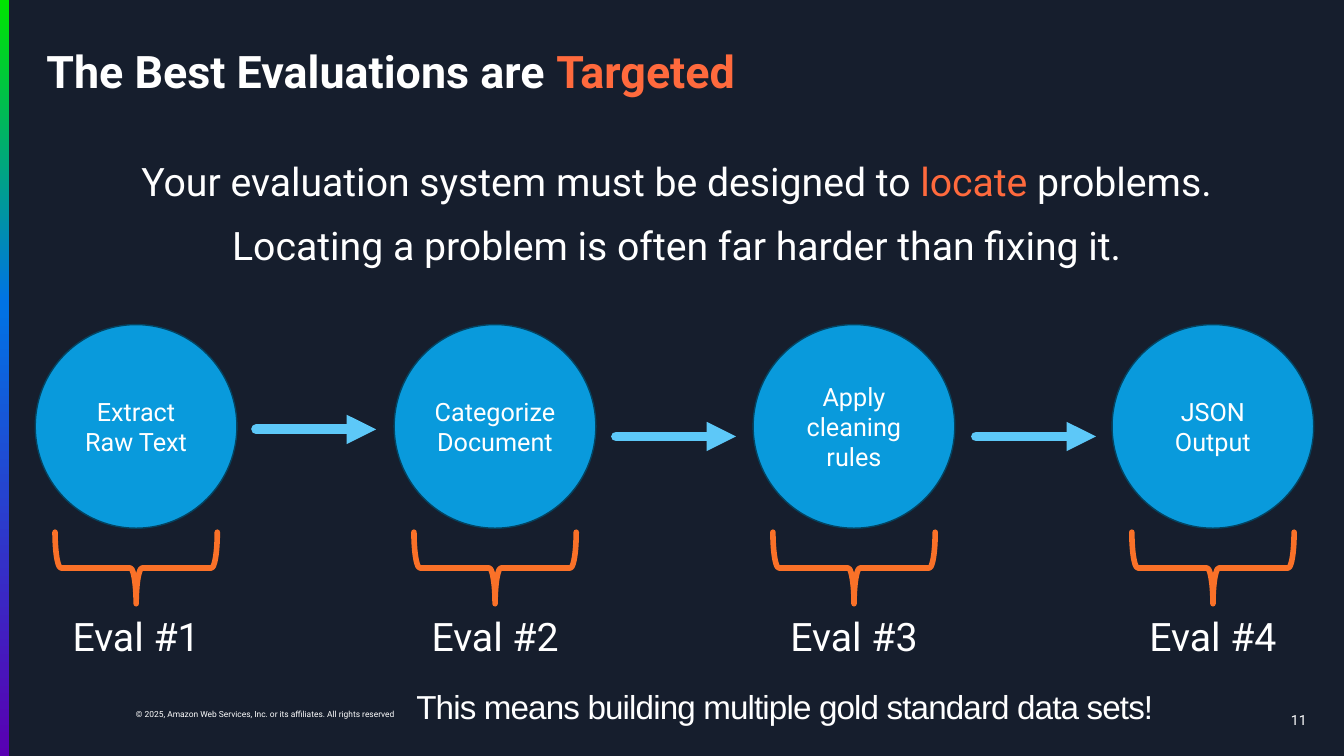
"""Build the slide on targeted evaluations: four pipeline stages, each with its own check."""
import copy

import lxml.etree
import pptx
import pptx.dml.color
import pptx.enum.shapes
import pptx.enum.text
import pptx.oxml.ns
import pptx.util

RGBColor = pptx.dml.color.RGBColor
Inches = pptx.util.Inches
Align = pptx.enum.text.PP_ALIGN
Anchor = pptx.enum.text.MSO_ANCHOR
Shape = pptx.enum.shapes.MSO_SHAPE
qn = pptx.oxml.ns.qn

NIGHT = RGBColor(0x16, 0x1E, 0x2D)
WHITE = RGBColor(0xFF, 0xFF, 0xFF)
CORAL = RGBColor(0xFF, 0x6A, 0x3D)
BLUE = RGBColor(0x09, 0x9A, 0xDC)
DEEP_BLUE = RGBColor(0x04, 0x43, 0x60)
SKY = RGBColor(0x5D, 0xC8, 0xF8)
ORANGE = RGBColor(0xFA, 0x71, 0x28)
STRIPE = [(0, RGBColor(0x00, 0xE5, 0x00)), (0.4, RGBColor(0x00, 0x73, 0xE5)),
          (1, RGBColor(0x59, 0x00, 0xB2))]

WIDTH, HEIGHT = 13.33, 7.5
PITCH = 3.56
FIRST_CENTRE = 1.35
STAGES = ["Extract Raw Text", "Categorize Document", "Apply cleaning rules", "JSON Output"]


def place(shape, left, top, width, height):
    """Set a shape's frame in inches."""
    frame = {"left": left, "top": top, "width": width, "height": height}
    for name, value in frame.items():
        setattr(shape, name, Inches(value))


def write(shape, lines, size, align, margins=(0, 0.05, 0, 0.05), anchor=Anchor.TOP,
          wrap=True, after=0, spacing=1.0, bold=False, font="Roboto"):
    """Fill a shape with lines, each a list of (text, colour) spans."""
    box = shape.text_frame
    settings = {"word_wrap": wrap, "auto_size": pptx.enum.text.MSO_AUTO_SIZE.NONE,
                "vertical_anchor": anchor}
    sides = ("margin_left", "margin_top", "margin_right", "margin_bottom")
    settings.update(zip(sides, map(Inches, margins)))
    for name, value in settings.items():
        setattr(box, name, value)
    for index, line in enumerate(lines):
        para = box.add_paragraph() if index else box.paragraphs[0]
        layout = {"alignment": align, "space_before": pptx.util.Pt(0),
                  "space_after": pptx.util.Pt(after), "line_spacing": spacing}
        for name, value in layout.items():
            setattr(para, name, value)
        for text, colour in line:
            span = para.add_run()
            span.text = text
            span.font.color.rgb = colour
            for name, value in {"name": font, "size": pptx.util.Pt(size), "bold": bold}.items():
                setattr(span.font, name, value)


deck = pptx.Presentation()
deck.slide_width, deck.slide_height = Inches(WIDTH), Inches(HEIGHT)
page = deck.slides.add_slide(deck.slide_layouts[1])
page.background.fill.solid()
page.background.fill.fore_color.rgb = NIGHT
shapes = page.shapes

stripe = shapes.add_shape(Shape.RECTANGLE, 0, 0, Inches(0.09), Inches(HEIGHT))
stripe.shadow.inherit = False
stripe.line.fill.background()
stripe.fill.gradient()
stripe.fill.gradient_angle = 270
stops = stripe.element.spPr.find(".//" + qn("a:gsLst"))
stops.append(copy.deepcopy(stops[-1]))
for stop, (position, colour) in zip(stripe.fill.gradient_stops, STRIPE):
    stop.position = position
    stop.color.rgb = colour

place(shapes.title, 0.46, 0.39, 12.5, 0.7)
write(shapes.title, [[("The Best Evaluations are ", WHITE), ("Targeted", CORAL)]], 32,
      Align.LEFT, margins=(0, 0.1, 0, 0.05), spacing=0.9, bold=True)

body = page.placeholders[1]
place(body, 0.46, 1.51, 12.5, 1.4)
write(body, [[("Your evaluation system must be designed to ", WHITE), ("locate", CORAL),
              (" problems.", WHITE)],
             [("Locating a problem is often far harder than fixing it.", WHITE)]],
      28, Align.CENTER, after=12)
for para in body.text_frame.paragraphs:
    properties = para._p.get_or_add_pPr()
    properties.set("marL", "0")
    properties.set("indent", "0")
    lxml.etree.SubElement(properties, qn("a:buNone"))

for index, stage in enumerate(STAGES):
    centre = FIRST_CENTRE + index * PITCH

    circle = shapes.add_shape(Shape.OVAL, Inches(centre - 1), Inches(3.22), Inches(2), Inches(2.02))
    circle.shadow.inherit = False
    circle.fill.solid()
    circle.fill.fore_color.rgb = BLUE
    circle.line.color.rgb = DEEP_BLUE
    circle.line.width = pptx.util.Pt(1)
    write(circle, [[(stage, WHITE)]], 18, Align.CENTER, margins=(0.1, 0.05, 0.1, 0.05),
          anchor=Anchor.MIDDLE)

    brace = shapes.add_shape(Shape.RIGHT_BRACE, Inches(centre - 0.355), Inches(4.83),
                             Inches(0.71), Inches(1.61))
    brace.shadow.inherit = False
    brace.rotation = 90
    brace.fill.background()
    brace.line.color.rgb = ORANGE
    brace.line.width = pptx.util.Pt(4)
    brace.element.spPr.find(qn("a:ln")).set("cap", "rnd")

    label = shapes.add_textbox(Inches(centre - 0.92), Inches(6.03), Inches(1.84), Inches(0.57))
    write(label, [[(f"Eval #{index + 1}", WHITE)]], 28, Align.CENTER, after=12)

for index, level in enumerate([4.26, 4.33, 4.33]):
    start = 2.54 + index * 3.57
    arrow = shapes.add_connector(pptx.enum.shapes.MSO_CONNECTOR.STRAIGHT, Inches(start),
                                 Inches(level), Inches(start + 1.19), Inches(level))
    arrow.line.color.rgb = SKY
    arrow.line.width = pptx.util.Pt(7)
    stroke = arrow.element.spPr.find(qn("a:ln"))
    stroke.set("cap", "rnd")
    lxml.etree.SubElement(stroke, qn("a:tailEnd"), type="triangle")
    lxml.etree.SubElement(arrow.element.spPr, qn("a:effectLst"))

takeaway = shapes.add_textbox(Inches(4.13), Inches(6.8), Inches(8.43), Inches(0.7))
write(takeaway, [[("This means building multiple gold standard data sets!", WHITE)]], 23.7,
      Align.LEFT, spacing=0.9, font="Arial")
takeaway.text_frame.paragraphs[0].runs[0].font._element.set("spc", "-60")

rights = shapes.add_textbox(Inches(1.25), Inches(6.99), Inches(2.85), Inches(0.2))
write(rights, [[("© 2025, Amazon Web Services, Inc. or its affiliates. All rights reserved", WHITE)]],
      6, Align.LEFT, margins=(0.1, 0.05, 0.1, 0.05), wrap=False)

number = shapes.add_textbox(Inches(9.96), Inches(6.94), Inches(3), Inches(0.4))
write(number, [[("11", WHITE)]], 10, Align.RIGHT, margins=(0, 0, 0, 0), anchor=Anchor.MIDDLE)

deck.save("out.pptx")
